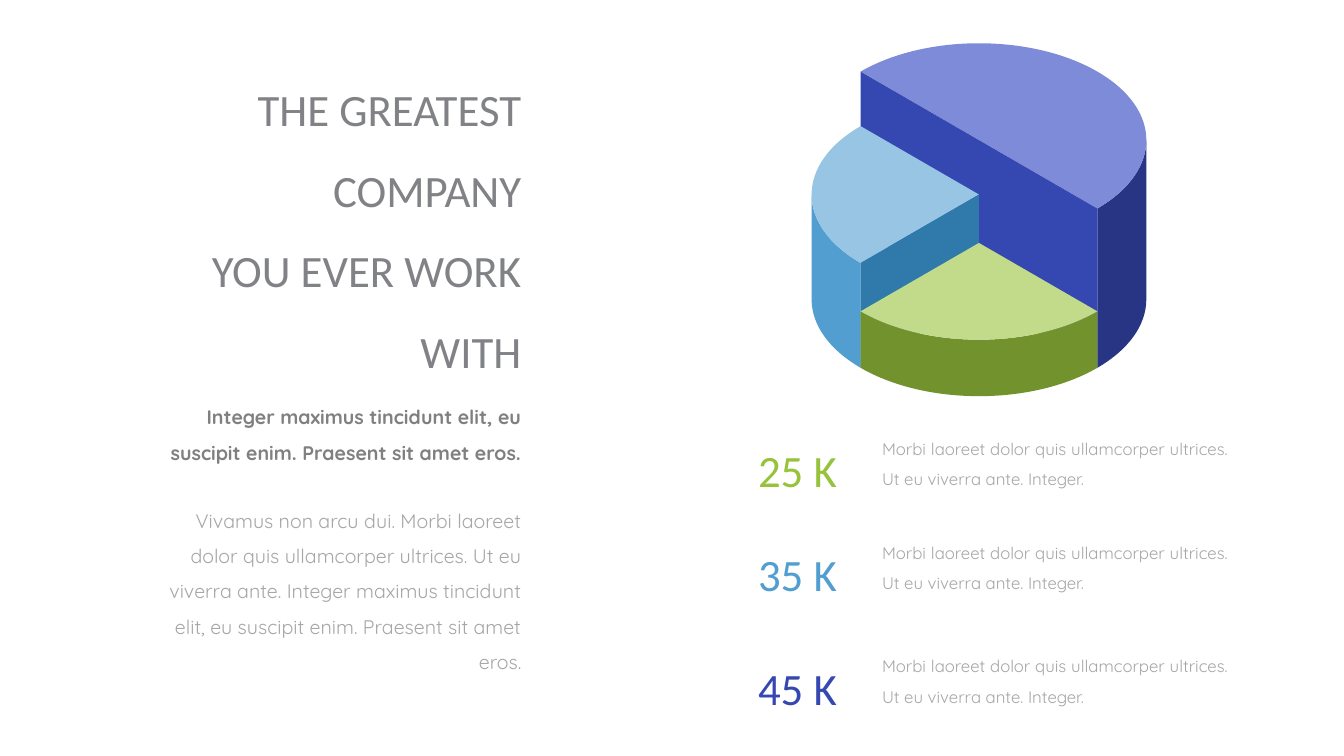
import math

from lxml import etree
from pptx import Presentation, util as u
from pptx.dml.color import RGBColor
from pptx.enum import text as t
from pptx.oxml import ns

HEADING, BODY = "Calibri", "Quicksand"
GREY = "A6A6A6"
CENTER, RIGHT, JUSTIFY = t.PP_ALIGN.CENTER, t.PP_ALIGN.RIGHT, t.PP_ALIGN.JUSTIFY
GREEN, BLUE, INDIGO = "97C33C", "539ED0", "3547B1"
UNITS = 1000  # freeform units per inch


def color(hex_code):
    return RGBColor.from_string(hex_code)


def add_text(slide, box, lines, font, size, hex_code, align, bold=False):
    frame = slide.shapes.add_textbox(*map(u.Inches, box)).text_frame
    frame.word_wrap = True
    frame.vertical_anchor = t.MSO_ANCHOR.MIDDLE
    for number, line in enumerate(lines):
        paragraph = frame.add_paragraph() if number else frame.paragraphs[0]
        paragraph.alignment = align
        paragraph.line_spacing = 1.5
        run = paragraph.add_run()
        run.text = line
        run.font.name = font
        run.font.size = u.Pt(size)
        run.font.bold = bold
        run.font.color.rgb = color(hex_code)


def add_face(group, steps, hex_code):
    """Outline a face: a step is one point for a line, three for a curve."""
    points = [(x * UNITS, y * UNITS) for step in steps for x, y in step]
    builder = group.shapes.build_freeform(*points[0], scale=u.Inches(1) / UNITS)
    builder.add_line_segments(points[1:], close=True)
    face = builder.convert_to_shape()
    segments = iter(list(face._element.iter(ns.qn("a:lnTo"))))
    for step in steps[1:]:
        parts = [next(segments) for _ in step]
        if len(parts) == 3:
            curve = etree.Element(ns.qn("a:cubicBezTo"))
            parts[0].addprevious(curve)
            for part in parts:
                curve.append(part[0])
                part.getparent().remove(part)
    face.shadow.inherit = False
    face.fill.solid()
    face.fill.fore_color.rgb = color(hex_code)
    face.line.fill.background()


def add_stepped_pie(slide, box):
    """Draw three slices of different heights, from back to front."""
    left, top, width, height = box
    radius_x, radius_y = width / 2, 0.96
    center_x, base = left + radius_x, top + height - radius_y

    def on_rim(degree, level, lean=0):
        """Point on the rim, moved along its tangent by lean radii."""
        a = math.radians(degree)
        return (center_x + radius_x * (math.cos(a) - lean * math.sin(a)),
                level + radius_y * (math.sin(a) + lean * math.cos(a)))

    def arc(start, end, level):
        """Rim steps; degrees run clockwise from the right."""
        count = math.ceil(abs(end - start) / 90)
        sweep = (end - start) / count
        lean = 4 / 3 * math.tan(math.radians(sweep) / 4)
        steps = [[on_rim(start, level)]]
        for number in range(count):
            a, b = start + number * sweep, start + (number + 1) * sweep
            steps.append([on_rim(a, level, lean), on_rim(b, level, -lean),
                          on_rim(b, level)])
        return steps

    # start, end, level of the top, visible outer wall, cut from and to, colours
    axis = None
    slices = [
        (225, 405, top + radius_y, (0, 45), (225, 45), ("7E8BD8", "283585", INDIGO)),
        (135, 225, top + 1.5, (135, 180), (135, axis), ("98C5E3", BLUE, "2F7AAB")),
        (45, 135, top + 1.98, (45, 135), (), ("C1DB8A", "71922D", None)),
    ]

    def corner(degree, level):
        return [(center_x, level) if degree is axis else on_rim(degree, level)]

    for start, end, level, (near, far), cut, (top_fill, wall_fill, cut_fill) in slices:
        group = slide.shapes.add_group_shape()
        add_face(group, arc(near, far, level) + arc(far, near, base), wall_fill)
        tip = [corner(axis, level)] if end - start < 180 else []
        add_face(group, arc(start, end, level) + tip, top_fill)
        if cut:
            add_face(group, [corner(side, level) for side in cut]
                     + [corner(side, base) for side in reversed(cut)], cut_fill)


def add_intro(slide, box):
    left, top, width, _ = box
    add_text(slide, (left, top, width, 3.15),
             ["THE GREATEST", "COMPANY", "YOU EVER WORK WITH"],
             HEADING, 32, "818285", RIGHT)
    add_text(slide, (left, top + 4.26, width, 1.95),
             ["Vivamus non arcu dui. Morbi laoreet dolor quis ullamcorper ultrices. "
              "Ut eu viverra ante. Integer maximus tincidunt elit, eu suscipit enim. "
              "Praesent sit amet eros."], BODY, 14, GREY, RIGHT)
    add_text(slide, (left, top + 3.35, width, 0.67),
             ["Integer maximus tincidunt elit, eu suscipit enim. "
              "Praesent sit amet eros."], BODY, 14, "808080", RIGHT, bold=True)


def add_legend_row(slide, box, amount, hex_code):
    left, top, width, height = box
    add_text(slide, (left, top + 0.1, 1.52, 0.61), [amount],
             HEADING, 32, hex_code, CENTER)
    add_text(slide, (left + 1.5, top, width - 1.5, height),
             ["Morbi laoreet dolor quis ullamcorper ultrices. "
              "Ut eu viverra ante. Integer."], BODY, 12, GREY, JUSTIFY)


def main():
    deck = Presentation()
    deck.slide_width, deck.slide_height = u.Inches(13.33), u.Inches(7.5)
    slide = deck.slides.add_slide(deck.slide_layouts[6])
    add_stepped_pie(slide, (8.05, 0.43, 3.32, 3.5))
    for top, amount, hex_code in [(4.12, "25 K", GREEN), (5.15, "35 K", BLUE),
                                  (6.28, "45 K", INDIGO)]:
        add_legend_row(slide, (7.15, top, 5.13, 0.86), amount, hex_code)
    add_intro(slide, (1.37, 0.57, 3.9, 6.2))
    deck.save("out.pptx")


if __name__ == "__main__":
    main()
